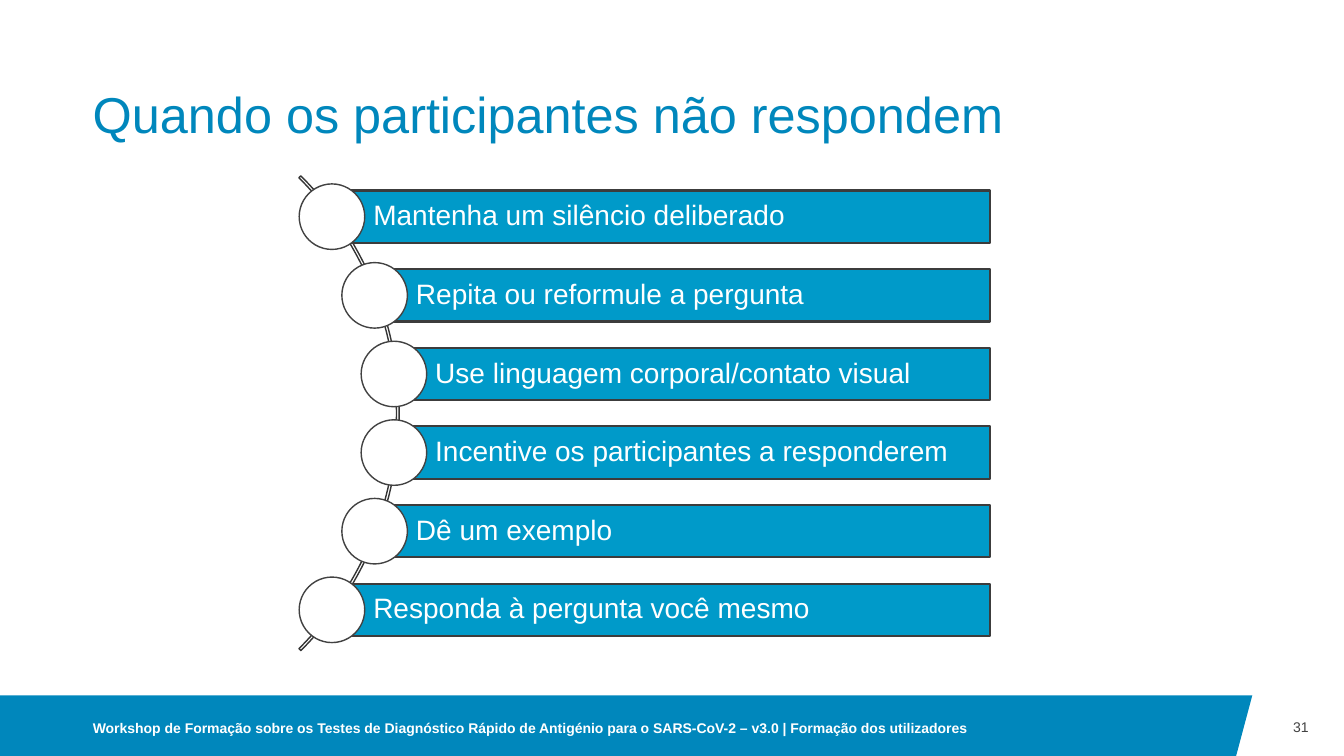
import math
from pptx import Presentation, util as u
from pptx.dml.color import RGBColor
from pptx.enum import shapes, text

TITLE = "Quando os participantes não respondem"
TIPS = [
    "Mantenha um silêncio deliberado",
    "Repita ou reformule a pergunta",
    "Use linguagem corporal/contato visual",
    "Incentive os participantes a responderem",
    "Dê um exemplo",
    "Responda à pergunta você mesmo",
]
FOOTER = ("Workshop de Formação sobre os Testes de Diagnóstico Rápido de Antigénio "
          "para o SARS-CoV-2 – v3.0\u00a0|\u00a0Formação dos utilizadores")
PAGE = "31"

WHITE = RGBColor(0xFF, 0xFF, 0xFF)
BLUE = RGBColor(0x00, 0x87, 0xBC)
BAR_BLUE = RGBColor(0x00, 0x9A, 0xC9)
ARC_LINE = RGBColor(0x35, 0x35, 0x35)
BAR_LINE = RGBColor(0x3C, 0x3C, 0x3C)
GREY = RGBColor(0x42, 0x42, 0x42)

WIDTH, HEIGHT = 13.33, 7.5
MARGIN = 0.92
FOOTER_TOP, FOOTER_RIGHT, SLANT = 6.9, 12.42, 0.16
ARC_X, ARC_Y, ARC_SIZE = 0.63, 4.1, 6.66
TRACK_RADIUS = 3.3  # bullet centres lie on this circle
PITCH, BAR_HEIGHT, BAR_RIGHT, BULLET = 0.78, 0.52, 9.82, 0.65


def write(shape, words, size, color, bold=False, align=text.PP_ALIGN.LEFT,
          anchor=text.MSO_ANCHOR.MIDDLE, insets=(0, 0, 0, 0), spacing=1.0):
    frame = shape.text_frame
    frame.word_wrap = True
    frame.vertical_anchor = anchor
    (frame.margin_left, frame.margin_top,
     frame.margin_right, frame.margin_bottom) = map(u.Inches, insets)
    frame.text = words
    paragraph = frame.paragraphs[0]
    paragraph.alignment = align
    paragraph.line_spacing = spacing
    font = paragraph.runs[0].font
    font.name, font.size, font.bold = "Arial", u.Pt(size), bold
    font.color.rgb = color


def paint(shape, fill=None, line=None, weight=1):
    """Apply a flat style; None leaves the fill or the line out."""
    shape.shadow.inherit = False
    if fill is None:
        shape.fill.background()
    else:
        shape.fill.solid()
        shape.fill.fore_color.rgb = fill
    if line is None:
        shape.line.fill.background()
    else:
        shape.line.color.rgb = line
        shape.line.width = u.Pt(weight)


def add_box(slide, *box):
    return slide.shapes.add_textbox(*map(u.Inches, box))


def add_preset(slide, kind, *box):
    return slide.shapes.add_shape(kind, *map(u.Inches, box))


def add_footer(slide):
    outline = slide.shapes.build_freeform(0, u.Inches(FOOTER_TOP))
    corners = [(FOOTER_RIGHT, FOOTER_TOP), (FOOTER_RIGHT - SLANT, HEIGHT), (0, HEIGHT)]
    outline.add_line_segments([(u.Inches(x), u.Inches(y)) for x, y in corners])
    paint(outline.convert_to_shape(), BLUE)
    write(add_box(slide, MARGIN, 6.95, 9.75, 0.55), FOOTER, 10, WHITE, bold=True)
    write(add_box(slide, FOOTER_RIGHT, FOOTER_TOP, 0.56, 0.63), PAGE, 10, GREY,
          align=text.PP_ALIGN.RIGHT)


def add_tips(slide):
    kinds = shapes.MSO_SHAPE
    arc = add_preset(slide, kinds.BLOCK_ARC, ARC_X - ARC_SIZE / 2,
                     ARC_Y - ARC_SIZE / 2, ARC_SIZE, ARC_SIZE)
    # start 315°, end 45°, thickness as a share of the size
    for index, value in enumerate((189, 27, 0.004)):
        arc.adjustments[index] = value
    paint(arc, line=ARC_LINE)

    for row, tip in enumerate(TIPS):
        offset = (row - (len(TIPS) - 1) / 2) * PITCH
        x = ARC_X + math.sqrt(TRACK_RADIUS ** 2 - offset ** 2)
        y = ARC_Y + offset
        bar = add_preset(slide, kinds.RECTANGLE, x, y - BAR_HEIGHT / 2,
                         BAR_RIGHT - x, BAR_HEIGHT)
        paint(bar, BAR_BLUE, BAR_LINE, 1.5)
        write(bar, tip, 20, WHITE, insets=(0.41, 0.06, 0.06, 0.06), spacing=0.9)
        bullet = add_preset(slide, kinds.OVAL, x - BULLET / 2, y - BULLET / 2,
                            BULLET, BULLET)
        paint(bullet, WHITE, GREY)


def main():
    deck = Presentation()
    deck.slide_width, deck.slide_height = u.Inches(WIDTH), u.Inches(HEIGHT)
    slide = deck.slides.add_slide(deck.slide_layouts[6])
    add_footer(slide)
    write(add_box(slide, MARGIN, 0.4, 11.5, 1.03), TITLE, 36, BLUE,
          anchor=text.MSO_ANCHOR.BOTTOM, spacing=0.9)
    add_tips(slide)
    deck.save("out.pptx")


if __name__ == "__main__":
    main()
